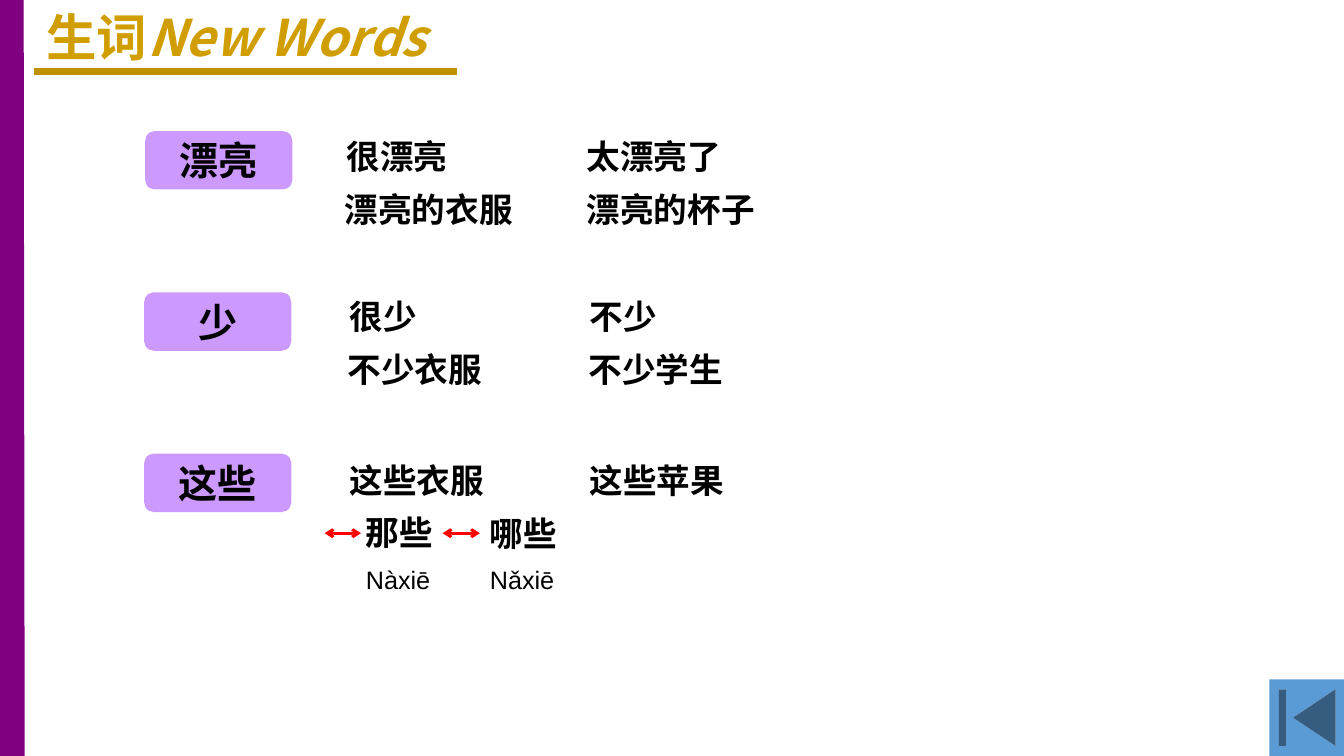
from dataclasses import dataclass

from lxml.etree import SubElement
from pptx import Presentation
from pptx.dml.color import RGBColor
from pptx.enum.shapes import MSO_CONNECTOR, MSO_SHAPE
from pptx.enum.text import MSO_ANCHOR, MSO_AUTO_SIZE, PP_ALIGN
from pptx.oxml.ns import qn
from pptx.shapes.autoshape import Shape
from pptx.slide import Slide
from pptx.text.text import TextFrame
from pptx.util import Inches, Pt

BLACK = RGBColor(0x00, 0x00, 0x00)
GOLD = RGBColor(0xD0, 0x9E, 0x00)
DARK_GOLD = RGBColor(0xBF, 0x90, 0x00)
LILAC = RGBColor(0xCC, 0x99, 0xFF)
PURPLE = RGBColor(0x80, 0x00, 0x80)
RED = RGBColor(0xFF, 0x00, 0x00)
BLUE = RGBColor(0x5B, 0x9B, 0xD5)
CHINESE_FONT = "Noto Sans CJK SC"


@dataclass
class Phrase:
    text: str
    left: float
    top: float
    width: float
    size: float = 24
    font: str = CHINESE_FONT
    bold: bool = True


@dataclass
class Card:
    word: str
    left: float
    top: float


@dataclass
class Rule:
    start: tuple[float, float]
    end: tuple[float, float]
    color: RGBColor
    width: float
    arrows: bool = False


CARDS = [
    Card("漂亮", 1.44, 1.3),
    Card("少", 1.43, 2.9),
    Card("这些", 1.43, 4.5),
]

PHRASES = [
    Phrase("很漂亮", 3.34, 1.3, 1.21),
    Phrase("太漂亮了", 5.72, 1.3, 1.55),
    Phrase("漂亮的衣服", 3.32, 1.83, 1.89),
    Phrase("漂亮的杯子", 5.72, 1.83, 1.89),
    Phrase("很少", 3.37, 2.89, 0.88),
    Phrase("不少", 5.75, 2.89, 0.88),
    Phrase("不少衣服", 3.35, 3.41, 1.55),
    Phrase("不少学生", 5.74, 3.41, 1.55),
    Phrase("这些衣服", 3.37, 4.51, 1.55),
    Phrase("这些苹果", 5.75, 4.51, 1.55),
    Phrase("那些", 3.53, 5.03, 0.88),
    Phrase("哪些", 4.76, 5.04, 0.88),
    Phrase("Nàxiē", 3.53, 5.55, 0.85, 18, "Arial", False),
    Phrase("Nǎxiē", 4.76, 5.55, 0.85, 18, "Arial", False),
]

RULES = [
    Rule((0.12, 7.5), (0.11, -0.02), PURPLE, 18),
    Rule((0.34, 0.71), (4.53, 0.71), DARK_GOLD, 5.5),
    Rule((3.22, 5.29), (3.58, 5.29), RED, 2, True),
    Rule((4.39, 5.29), (4.76, 5.29), RED, 2, True),
]


def write(frame: TextFrame, text: str, *, size: float, font: str = CHINESE_FONT,
          color: RGBColor = BLACK, bold: bool = True, italic: bool = False,
          align: PP_ALIGN = PP_ALIGN.LEFT) -> None:
    para = frame.paragraphs[0]
    para.alignment = align
    span = para.add_run()
    span.text = text
    span.font.size = Pt(size)
    span.font.bold = bold
    span.font.italic = italic
    span.font.color.rgb = color
    span.font.name = font
    SubElement(span.font._element, qn("a:ea"), typeface=CHINESE_FONT)


def add_title(page: Slide) -> None:
    title = page.shapes.title
    title.left, title.top = Inches(0.36), Inches(0.01)
    title.width, title.height = Inches(4.3), Inches(0.71)
    frame = title.text_frame
    frame.word_wrap = False
    frame.auto_size = MSO_AUTO_SIZE.SHAPE_TO_FIT_TEXT
    frame.vertical_anchor = MSO_ANCHOR.TOP
    write(frame, "生词", size=36, color=GOLD)
    write(frame, "New Words", size=36, color=GOLD, italic=True)


def add_filled(page: Slide, kind: MSO_SHAPE, left: float, top: float,
               width: float, height: float, color: RGBColor) -> Shape:
    shape = page.shapes.add_shape(
        kind, Inches(left), Inches(top), Inches(width), Inches(height))
    shape.shadow.inherit = False
    shape.fill.solid()
    shape.fill.fore_color.rgb = color
    shape.line.fill.background()
    return shape


def add_card(page: Slide, card: Card) -> None:
    shape = add_filled(page, MSO_SHAPE.ROUNDED_RECTANGLE,
                       card.left, card.top, 1.46, 0.58, LILAC)
    shape.text_frame.vertical_anchor = MSO_ANCHOR.MIDDLE
    write(shape.text_frame, card.word, size=28, font="Calibri", align=PP_ALIGN.CENTER)


def add_phrase(page: Slide, phrase: Phrase) -> None:
    height = 0.5 if phrase.size == 24 else 0.4
    box = page.shapes.add_textbox(Inches(phrase.left), Inches(phrase.top),
                                  Inches(phrase.width), Inches(height))
    box.text_frame.word_wrap = False
    box.text_frame.auto_size = MSO_AUTO_SIZE.SHAPE_TO_FIT_TEXT
    write(box.text_frame, phrase.text, size=phrase.size, font=phrase.font, bold=phrase.bold)


def add_rule(page: Slide, rule: Rule) -> None:
    ends = [Inches(value) for value in rule.start + rule.end]
    line = page.shapes.add_connector(MSO_CONNECTOR.STRAIGHT, *ends)
    line.line.color.rgb = rule.color
    line.line.width = Pt(rule.width)
    properties = line._element.spPr
    if rule.arrows:
        for tag in ("a:headEnd", "a:tailEnd"):
            SubElement(properties.find(qn("a:ln")), qn(tag), type="arrow")
    SubElement(properties, qn("a:effectLst"))


def main() -> None:
    deck = Presentation()
    deck.slide_width, deck.slide_height = Inches(13.33), Inches(7.5)
    page = deck.slides.add_slide(deck.slide_layouts.get_by_name("Title Only"))
    add_title(page)
    for card in CARDS:
        add_card(page, card)
    for rule in RULES:
        add_rule(page, rule)
    for phrase in PHRASES:
        add_phrase(page, phrase)
    add_filled(page, MSO_SHAPE.ACTION_BUTTON_BEGINNING, 12.59, 6.74, 0.75, 0.76, BLUE)
    deck.save("out.pptx")


if __name__ == "__main__":
    main()
